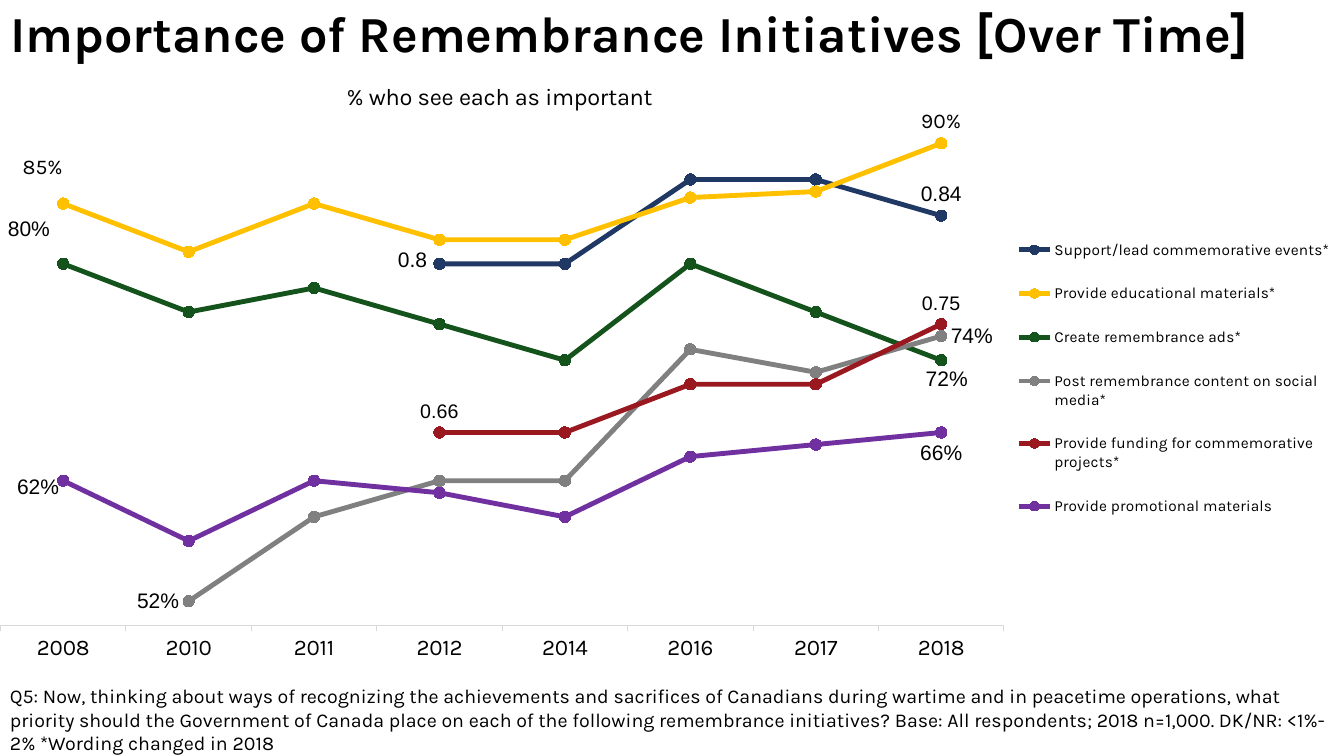
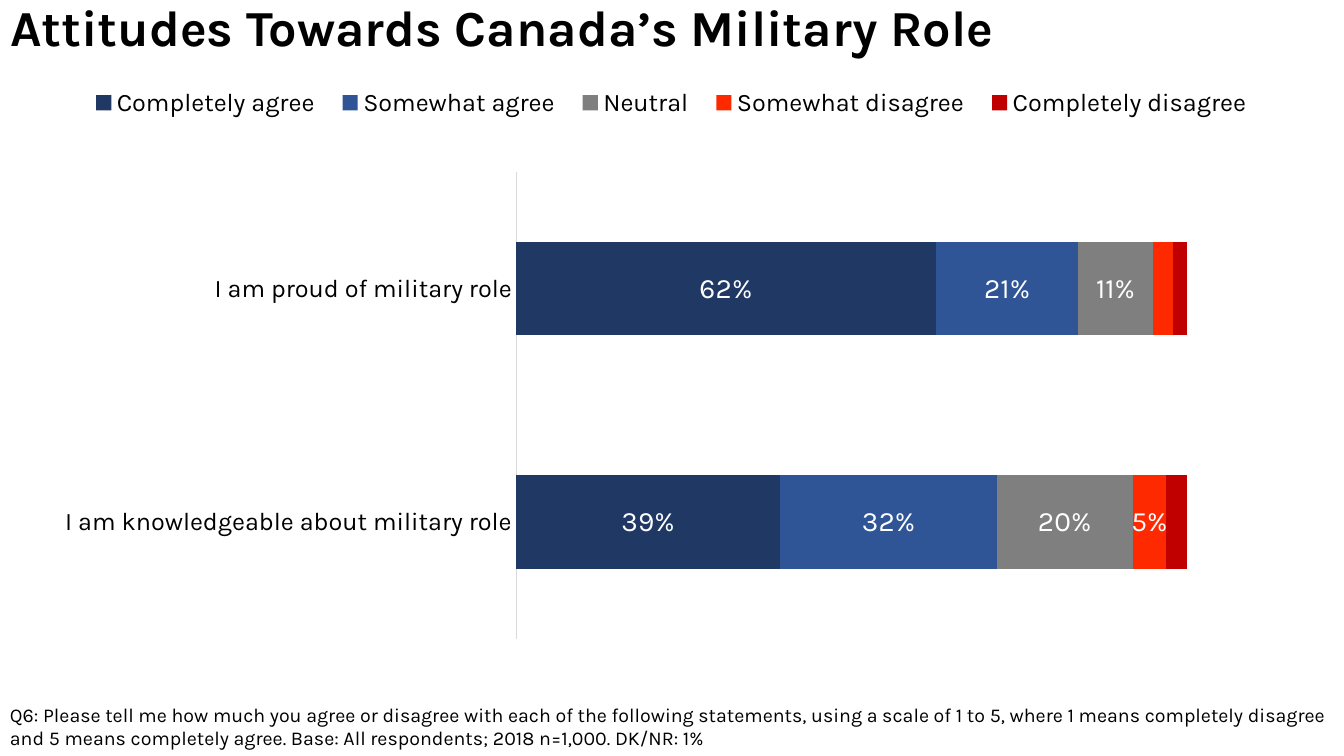
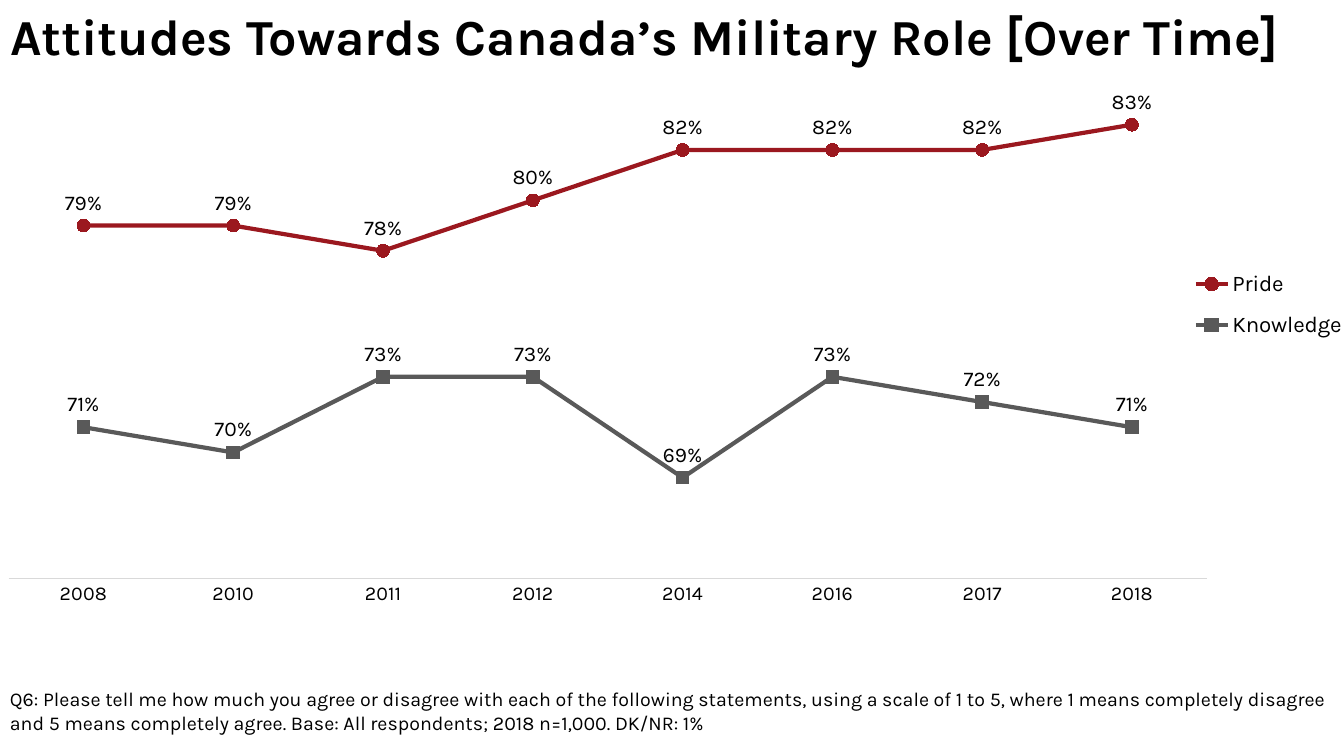
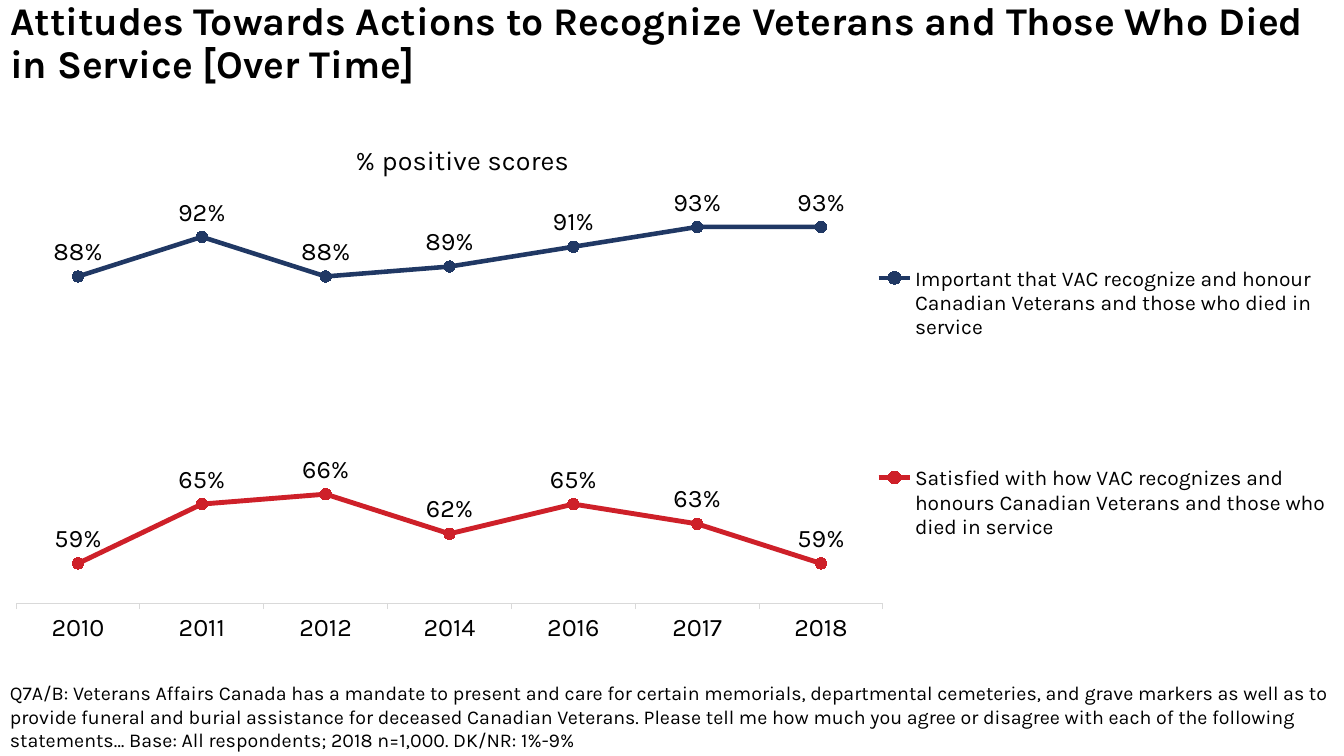
from dataclasses import dataclass, field
from typing import Optional

from lxml.etree import SubElement
from pptx import Presentation
from pptx.chart.data import CategoryChartData as Data
from pptx.dml.color import RGBColor
from pptx.enum.chart import (
    XL_CHART_TYPE as Kind, XL_LABEL_POSITION as Pos, XL_LEGEND_POSITION as Side,
    XL_MARKER_STYLE as Mark, XL_TICK_MARK as Tick)
from pptx.enum.text import MSO_ANCHOR, MSO_AUTO_SIZE, PP_ALIGN
from pptx.oxml.ns import qn
from pptx.util import Inches, Pt


# Shared look
@dataclass(frozen=True)
class Theme:
    wide: float = 13.33
    high: float = 7.5
    face: str = "Karla"
    plain: str = "Arial"
    ink: str = "000000"
    paper: str = "FFFFFF"
    rule: str = "D9D9D9"
    navy: str = "203864"
    blue: str = "2F5597"
    gold: str = "FFC000"
    green: str = "15531C"
    grey: str = "808080"
    ash: str = "7F7F7F"
    slate: str = "595959"
    wine: str = "9A181F"
    crimson: str = "9B181F"
    scarlet: str = "CE2029"
    flame: str = "FF2900"
    brick: str = "C00000"
    purple: str = "7030A0"
    head: float = 36
    note: float = 14


T = Theme()


# One chart series; tags maps a point to (place, dx, dy), None tags every point
@dataclass
class Row:
    name: str
    vals: list
    hue: str
    tags: Optional[dict] = None
    size: float = 15
    face: str = T.face
    fmt: str = "0%"
    ink: str = T.ink
    width: float = 3.5
    mark: Mark = Mark.CIRCLE


# Settings of one chart
@dataclass
class Look:
    box: tuple
    plot: tuple
    axis: float
    keys: float
    low: float
    top: float
    legend: tuple
    tick: Tick = Tick.NONE
    side: Side = Side.RIGHT
    title: Optional[tuple] = None
    dot: int = 8
    kind: Kind = Kind.LINE_MARKERS
    cats: list = field(default_factory=list)


def tint(text):
    return RGBColor.from_string(text)


def style(font, size, face=T.face, hue=T.ink, bold=False):
    font.size = Pt(size)
    font.name = face
    font.bold = bold
    font.color.rgb = tint(hue)


def flood(fill, hue):
    fill.solid()
    fill.fore_color.rgb = tint(hue)


def area(box):
    return [Inches(n) for n in box]


# Manual layout, as fractions of the chart, set after the named child
def place(node, spot, after=None, inner=False, edge=True):
    for old in node.findall(qn("c:layout")):
        node.remove(old)
    lay = SubElement(node, qn("c:layout"))
    man = SubElement(lay, qn("c:manualLayout"))
    pairs = [("layoutTarget", "inner")] if inner else []
    if edge:
        pairs += [("xMode", "edge"), ("yMode", "edge")]
    pairs += zip("xywh", spot)
    for tag, val in pairs:
        SubElement(man, qn("c:" + tag)).set("val", str(val))
    if after:
        node.find(qn("c:" + after)).addnext(lay)
    else:
        node.insert(0, lay)


# Slide with title and question note
def page(deck, title, high, note, top, size=T.head, rise=0, solid=False):
    slide = deck.slides.add_slide(deck.slide_layouts[5])
    head = slide.shapes.title
    head.left, head.top, head.width, head.height = area((0, rise, T.wide, high))
    if solid:
        flood(head.fill, T.paper)
    write(head.text_frame, title, size, True)
    head.text_frame.vertical_anchor = MSO_ANCHOR.MIDDLE
    head.text_frame.paragraphs[0].line_spacing = 0.9
    foot = slide.shapes.add_textbox(*area((0, top, T.wide, T.high - top)))
    write(foot.text_frame, note, T.note)
    return slide


def write(frame, text, size, bold=False):
    frame.word_wrap = True
    frame.auto_size = MSO_AUTO_SIZE.NONE
    para = frame.paragraphs[0]
    para.text = text
    para.alignment = PP_ALIGN.LEFT
    style(para.font, size, bold=bold)


# Value labels, on all points or on the chosen ones
def label(ser, row, spot):
    if row.tags == {}:
        return
    tags = ser.data_labels
    tags.number_format = row.fmt
    tags.number_format_is_linked = False
    tags.show_value = row.tags is None
    style(tags.font, row.size, row.face, row.ink)
    for lead in tags._element.findall(qn("c:showLeaderLines")):
        lead.set("val", "0")
    if row.tags is None:
        tags.position = spot
        return
    for i, (pos, dx, dy) in row.tags.items():
        tag = ser.points[i].data_label
        style(tag.font, row.size, row.face, row.ink)
        tag.position = pos
        if dx or dy:
            place(tag._get_or_add_dLbl(), (dx, dy), "idx", edge=False)


def paint(ser, row, dot):
    ser.smooth = False
    ser.format.line.color.rgb = tint(row.hue)
    ser.format.line.width = Pt(row.width)
    ser.marker.style = row.mark
    ser.marker.size = dot
    flood(ser.marker.format.fill, row.hue)
    ser.marker.format.line.color.rgb = tint(row.hue)


def axes(chart, look):
    cat, val = chart.category_axis, chart.value_axis
    cat.major_tick_mark = look.tick
    cat.minor_tick_mark = Tick.NONE
    cat.has_major_gridlines = False
    cat.format.line.color.rgb = tint(T.rule)
    cat.format.line.width = Pt(0.75)
    style(cat.tick_labels.font, look.axis)
    val.visible = False
    val.has_major_gridlines = False
    val.minimum_scale, val.maximum_scale = look.low, look.top


def caption(chart, look):
    chart.has_title = look.title is not None
    if look.title:
        text, size, spot = look.title
        para = chart.chart_title.text_frame.paragraphs[0]
        para.text = text
        style(para.font, size)
        place(chart.chart_title._element, spot, "tx")


def legend(chart, look):
    chart.has_legend = True
    keys = chart.legend
    keys.position = look.side
    keys.include_in_layout = False
    style(keys.font, look.keys)
    place(keys._element, look.legend, "legendPos")


def graph(slide, look, rows):
    data = Data()
    data.categories = look.cats
    for row in rows:
        data.add_series(row.name, row.vals, row.fmt)
    chart = slide.shapes.add_chart(look.kind, *area(look.box), data).chart
    style(chart.font, look.axis)
    caption(chart, look)
    legend(chart, look)
    axes(chart, look)
    plot = chart.plots[0]
    plot.vary_by_categories = False
    bars = look.kind == Kind.BAR_STACKED
    if bars:
        plot.gap_width, plot.overlap = 150, 100
    for ser, row in zip(plot.series, rows):
        if bars:
            flood(ser.format.fill, row.hue)
        else:
            paint(ser, row, look.dot)
        label(ser, row, Pos.CENTER if bars else Pos.ABOVE)
    place(chart._chartSpace.chart.plotArea, look.plot, inner=True)


YEARS = ["2008", "2010", "2011", "2012", "2014", "2016", "2017", "2018"]
AGREE = ("Q6: Please tell me how much you agree or disagree with each of the "
         "following statements, using a scale of 1 to 5, where 1 means completely "
         "disagree and 5 means completely agree. Base: All respondents; 2018 "
         "n=1,000. DK/NR: 1%")
ROLE = "Attitudes Towards Canada’s Military Role"


# Slide 1
def trend(deck):
    slide = page(
        deck, "Importance of Remembrance Initiatives [Over Time]", 0.71,
        "Q5: Now, thinking about ways of recognizing the achievements and sacrifices "
        "of Canadians during wartime and in peacetime operations, what priority "
        "should the Government of Canada place on each of the following remembrance "
        "initiatives? Base: All respondents; 2018 n=1,000. DK/NR: <1%-2% "
        "*Wording changed in 2018", 6.74)
    look = Look((0, 0.76, 13.62, 5.97), (0, 0.091, 0.731, 0.821), 16, 11, 0.5, 0.91,
                (0.73, 0.231, 0.25, 0.54), tick=Tick.OUTSIDE, cats=YEARS,
                title=("% who see each as important", 16.8, (0.249, 0.001)))
    up, down = (Pos.ABOVE, 0, 0), (Pos.BELOW, 0, 0)
    left, right = (Pos.LEFT, 0, 0), (Pos.RIGHT, 0, 0)
    gap = [None] * 3
    graph(slide, look, [
        Row("Support/lead commemorative events*", gap + [0.8, 0.8, 0.87, 0.87, 0.84],
            T.navy, {3: (Pos.LEFT, -0.002, -0.006), 7: up}, face=T.plain,
            fmt="General"),
        Row("Provide educational materials*",
            [0.85, 0.81, 0.85, 0.82, 0.82, 0.855, 0.86, 0.9],
            T.gold, {0: (Pos.ABOVE, -0.015, -0.023), 7: up}),
        Row("Create remembrance ads*",
            [0.8, 0.76, 0.78, 0.75, 0.72, 0.8, 0.76, 0.72],
            T.green, {0: (Pos.ABOVE, -0.025, -0.022), 7: (Pos.BELOW, 0.004, -0.003)},
            face=T.plain),
        Row("Post remembrance content on social media*",
            [None, 0.52, 0.59, 0.62, 0.62, 0.729, 0.71, 0.74],
            T.grey, {1: left, 7: right}, face=T.plain),
        Row("Provide funding for commemorative projects*",
            gap + [0.66, 0.66, 0.7, 0.7, 0.75],
            T.wine, {3: up, 7: up}, 14, T.plain, "General"),
        Row("Provide promotional materials",
            [0.62, 0.57, 0.62, 0.61, 0.59, 0.64, 0.65, 0.66],
            T.purple, {0: (Pos.LEFT, 0.004, 0.011), 7: down}, face=T.plain)])


# Slide 2
def stack(deck):
    slide = page(deck, ROLE, 0.81, AGREE, 6.92, rise=-0.11, solid=True)
    look = Look((0, 0.71, 13.33, 6.09), (0.384, 0.164, 0.605, 0.76), 18, 18, 0, 1.2,
                (0.057, 0.016, 0.885, 0.07), side=Side.TOP, kind=Kind.BAR_STACKED,
                cats=["I am knowledgeable about military role",
                      "I am proud of military role"])
    graph(slide, look, [
        Row(name, vals, hue, tags, 20, ink=T.paper) for name, vals, hue, tags in [
            ("Completely agree", [0.39, 0.62], T.navy, None),
            ("Somewhat agree", [0.32, 0.21], T.blue, None),
            ("Neutral", [0.2, 0.11], T.ash, None),
            ("Somewhat disagree", [0.05, 0.03], T.flame, {0: (Pos.CENTER, 0, 0)}),
            ("Completely disagree", [0.03, 0.02], T.brick, {})]])


# Slide 3
def pride(deck):
    slide = page(deck, ROLE + " [Over Time]", 0.78, AGREE, 6.77, solid=True)
    look = Look((0.08, 0.71, 13.33, 5.51), (0, 0.005, 0.892, 0.908), 14, 16, 0.65, 0.85,
                (0.878, 0.332, 0.12, 0.175), dot=9, cats=YEARS)
    graph(slide, look, [
        Row("Pride", [0.79, 0.79, 0.78, 0.8, 0.82, 0.82, 0.82, 0.83],
            T.crimson, width=3),
        Row("Knowledge", [0.71, 0.7, 0.73, 0.73, 0.69, 0.73, 0.72, 0.71],
            T.slate, width=3, mark=Mark.SQUARE)])


# Slide 4
def honour(deck):
    slide = page(
        deck, "Attitudes Towards Actions to Recognize Veterans and Those Who Died in "
        "Service [Over Time]", 0.88,
        "Q7A/B: Veterans Affairs Canada has a mandate to present and care for certain "
        "memorials, departmental cemeteries, and grave markers as well as to provide "
        "funeral and burial assistance for deceased Canadian Veterans. Please tell me "
        "how much you agree or disagree with each of the following statements… Base: "
        "All respondents; 2018 n=1,000. DK/NR: 1%-9%", 6.71, size=28)
    look = Look((0, 1.18, 13.33, 5.44), (0.012, 0.161, 0.645, 0.722), 18, 15, 0.55, 0.95,
                (0.645, 0.039, 0.35, 0.96), tick=Tick.OUTSIDE, cats=YEARS[1:],
                title=("% positive scores", 19.2, (0.261, 0.034)))
    graph(slide, look, [
        Row("Important that VAC recognize and honour Canadian Veterans and those who "
            "died in service", [0.88, 0.92, 0.88, 0.89, 0.91, 0.93, 0.93],
            T.navy, size=18, width=3.25),
        Row("Satisfied with how VAC recognizes and honours Canadian Veterans and those "
            "who died in service", [0.59, 0.65, 0.66, 0.62, 0.65, 0.63, 0.59],
            T.scarlet, size=18)])


def main():
    deck = Presentation()
    deck.slide_width, deck.slide_height = Inches(T.wide), Inches(T.high)
    for build in (trend, stack, pride, honour):
        build(deck)
    deck.save("out.pptx")


if __name__ == "__main__":
    main()
